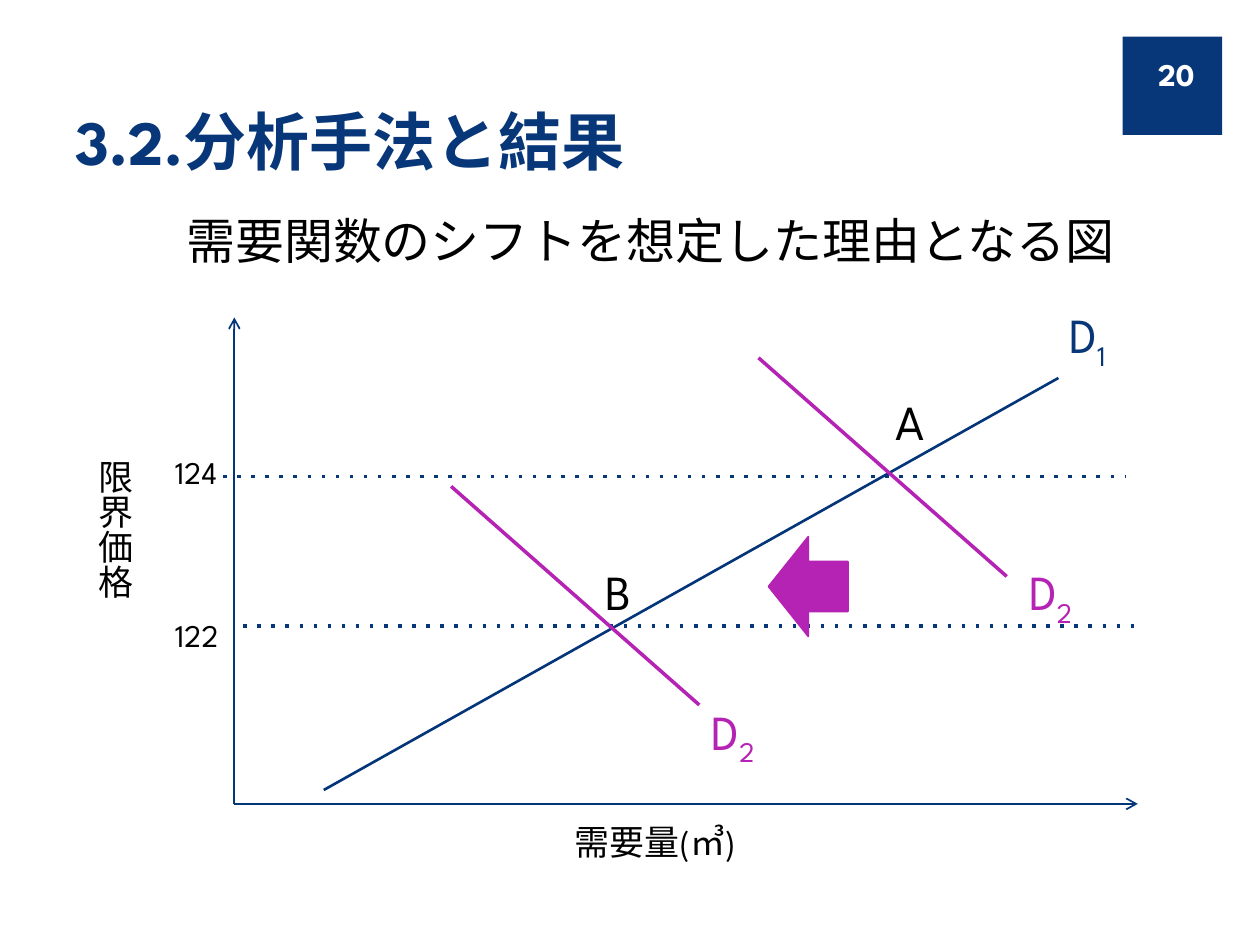
from dataclasses import dataclass

from lxml.etree import SubElement
from pptx import Presentation
from pptx.dml.color import RGBColor
from pptx.enum.shapes import MSO_CONNECTOR, MSO_SHAPE
from pptx.enum.text import MSO_ANCHOR, MSO_AUTO_SIZE, PP_ALIGN
from pptx.oxml.ns import qn
from pptx.util import Inches, Pt


@dataclass(frozen=True)
class Theme:
    font: str = "League Spartan"
    navy: RGBColor = RGBColor(0x07, 0x37, 0x79)
    axis_blue: RGBColor = RGBColor(0x04, 0x35, 0x79)
    purple: RGBColor = RGBColor(0xB5, 0x23, 0xB4)
    black: RGBColor = RGBColor(0, 0, 0)
    white: RGBColor = RGBColor(255, 255, 255)
    title: int = 36
    label: int = 28
    axis_name: int = 20
    tick: int = 18


THEME = Theme()
COLUMNS, ROWS = 100, 75
CELL = Inches(0.1)
LABEL_HEIGHT, TICK_HEIGHT = 5.7, 4
ORIGIN = (18.6, 63.8)
DEMAND_SPAN = (19.7, 17.35)


def grid(*cells):
    """Turn columns and rows into slide lengths."""
    return [round(cell * CELL) for cell in cells]


def apply(target, formats):
    for attribute, value in formats.items():
        setattr(target, attribute, value)


def add_run(paragraph, text, size, color, bold=False):
    run = paragraph.add_run()
    run.text = text
    apply(run.font, {"name": THEME.font, "size": Pt(size), "bold": bold})
    run.font.color.rgb = color
    return run


def add_label(slide, box, text, size, color=THEME.black, subscript="",
              bold=False, align=PP_ALIGN.LEFT, **frame_formats):
    frame = slide.shapes.add_textbox(*grid(*box)).text_frame
    apply(frame, {"word_wrap": True, **frame_formats})
    paragraph = frame.paragraphs[0]
    paragraph.alignment = align
    add_run(paragraph, text, size, color, bold)
    if subscript:
        lowered = add_run(paragraph, subscript, size, color, bold)
        lowered.font._element.set("baseline", "-25000")
    return frame


def add_line(slide, start, end, color, width, dotted=False, arrow=False):
    line = slide.shapes.add_connector(MSO_CONNECTOR.STRAIGHT, *grid(*start, *end))
    line.line.color.rgb = color
    line.line.width = Pt(width)
    properties = line._element.spPr
    outline = properties.find(qn("a:ln"))
    if dotted:
        SubElement(outline, qn("a:prstDash"), val="dot")
    if arrow:
        SubElement(outline, qn("a:tailEnd"), type="arrow")
    SubElement(properties, qn("a:effectLst"))


def add_block(slide, kind, box, color):
    block = slide.shapes.add_shape(kind, *grid(*box))
    block.shadow.inherit = False
    block.fill.solid()
    block.fill.fore_color.rgb = color
    block.line.color.rgb = color
    block.line.width = Pt(1)
    return block


def add_heading(slide):
    badge = add_block(slide, MSO_SHAPE.RECTANGLE, (89.1, 2.9, 7.9, 7.8), THEME.navy)
    badge.line.fill.background()
    add_label(slide, (90.3, 3.9, 5.5, 4), "20", THEME.tick, THEME.white, bold=True,
              align=PP_ALIGN.RIGHT, vertical_anchor=MSO_ANCHOR.MIDDLE)
    add_label(slide, (5, 8.4, 71.2, 6.2), "3.2.分析手法と結果", THEME.title,
              THEME.navy, bold=True, vertical_anchor=MSO_ANCHOR.BOTTOM)
    add_label(slide, (13.8, 16.2, 81.1, LABEL_HEIGHT),
              "需要関数のシフトを想定した理由となる図", THEME.label)


def add_axes(slide):
    for tip in ((ORIGIN[0], 25.2), (90.3, ORIGIN[1])):
        add_line(slide, ORIGIN, tip, THEME.axis_blue, 1, arrow=True)
    price_name = add_label(slide, (5.9, 35.5, 5.4, 12.2), "限界価格",
                           THEME.axis_name, word_wrap=False,
                           auto_size=MSO_AUTO_SIZE.SHAPE_TO_FIT_TEXT)
    price_name._txBody.bodyPr.set("vert", "eaVert")
    add_label(slide, (44.6, 64.6, 14.9, 4.4), "需要量(㎥)", THEME.axis_name)


def add_price_levels(slide):
    levels = (("124", 35.5, 37.8, 17.7, 89.4), ("122", 48.4, 49.7, 19.3, 90.2))
    for price, label_top, row, left, right in levels:
        add_line(slide, (left, row), (right, row), THEME.navy, 2, dotted=True)
        add_label(slide, (12.9, label_top, 7.9, TICK_HEIGHT), price, THEME.tick)


def add_curves(slide):
    add_line(slide, (25.7, 62.7), (84, 30), THEME.axis_blue, 1.5)
    for column, row in ((60.2, 28.4), (35.8, 38.6)):
        end = (column + DEMAND_SPAN[0], row + DEMAND_SPAN[1])
        add_line(slide, (column, row), end, THEME.purple, 2)
    curve_names = (("1", 83.9, 23.7, THEME.navy),
                   ("2", 80.7, 44.1, THEME.purple),
                   ("2", 55.5, 55.2, THEME.purple))
    for index, column, row, color in curve_names:
        add_label(slide, (column, row, 10.2, LABEL_HEIGHT), "D", THEME.label,
                  color, subscript=index)
    add_block(slide, MSO_SHAPE.LEFT_ARROW, (61, 42.6, 6.3, 7.9), THEME.purple)
    for point, column, row in (("A", 69.8, 30.6), ("B", 46.6, 44.1)):
        add_label(slide, (column, row, 4.9, LABEL_HEIGHT), point, THEME.label,
                  align=PP_ALIGN.CENTER)


def main():
    deck = Presentation()
    apply(deck, {"slide_width": COLUMNS * CELL, "slide_height": ROWS * CELL})
    slide = deck.slides.add_slide(deck.slide_layouts[6])
    for add_part in (add_heading, add_axes, add_price_levels, add_curves):
        add_part(slide)
    deck.save("out.pptx")


if __name__ == "__main__":
    main()
